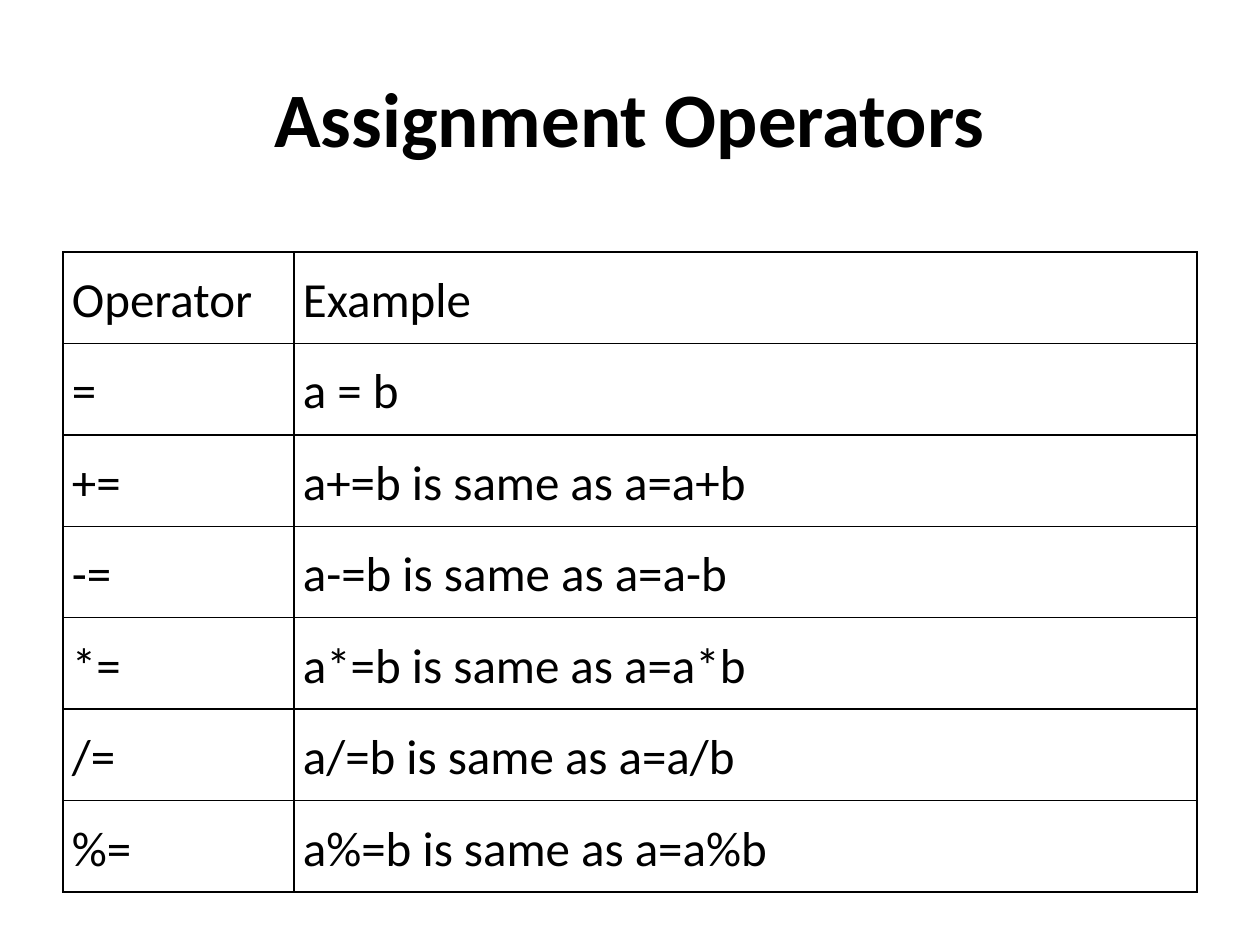
from lxml import etree
from pptx import Presentation
from pptx.dml.color import RGBColor
from pptx.enum.text import MSO_ANCHOR, PP_ALIGN
from pptx.oxml.ns import qn
from pptx.util import Emu, Pt

MIDDLE, TOP = MSO_ANCHOR.MIDDLE, MSO_ANCHOR.TOP
CENTER, LEFT = PP_ALIGN.CENTER, PP_ALIGN.LEFT
PX = 914400 // 126
FONT, BLACK = "Calibri", "000000"

ROWS = [("Operator", "Example"), ("=", "a = b")] + [
    (f"{op}=", f"a{op}=b is same as a=a{op}b") for op in "+-*/%"
]


def px(n):
    return Emu(n * PX)


def color(hex_code):
    return RGBColor.from_string(hex_code)


def set_text(tf, text, size, align, bold=False):
    tf.text = text
    p = tf.paragraphs[0]
    p.alignment = align
    font = p.runs[0].font
    font.name, font.size, font.bold = FONT, Pt(size), bold
    font.color.rgb = color(BLACK)
    return p


def set_borders(cell, hex_code, width):
    tc_pr = cell._tc.get_or_add_tcPr()
    for i, side in enumerate(("a:lnL", "a:lnR", "a:lnT", "a:lnB")):
        ln = etree.Element(qn(side), w=str(Pt(width)))
        fill = etree.SubElement(ln, qn("a:solidFill"))
        etree.SubElement(fill, qn("a:srgbClr"), val=hex_code)
        tc_pr.insert(i, ln)


def add_title(slide, x, y, w, h, text):
    tf = slide.shapes.add_textbox(px(x), px(y), px(w), px(h)).text_frame
    tf.word_wrap = True
    tf.vertical_anchor = MIDDLE
    set_text(tf, text, 44, CENTER, bold=True)


def add_operator_table(slide, x, y, w, h, rows, first_col):
    frame = slide.shapes.add_table(len(rows), 2, px(x), px(y), px(w), px(h))
    table = frame.table
    table.first_row = table.horz_banding = False
    for col, width in zip(table.columns, (first_col, w - first_col)):
        col.width = px(width)
    for r, texts in enumerate(rows):
        table.rows[r].height = px(h) // len(rows)
        for c, text in enumerate(texts):
            cell = table.cell(r, c)
            cell.fill.background()
            cell.vertical_anchor = TOP
            cell.margin_left = cell.margin_right = px(9)
            cell.margin_top, cell.margin_bottom = Pt(30), 0
            p = set_text(cell.text_frame, text, 28, LEFT)
            p.line_spacing = Pt(15)
            set_borders(cell, BLACK, 1)


def main():
    prs = Presentation()
    prs.slide_width, prs.slide_height = px(1260), px(945)
    slide = prs.slides.add_slide(prs.slide_layouts[6])

    # Heading
    add_title(slide, 63, 38, 1134, 158, "Assignment Operators")
    # Operators with examples
    add_operator_table(slide, 63, 252, 1134, 640, ROWS, first_col=231)

    prs.save("out.pptx")


if __name__ == "__main__":
    main()
